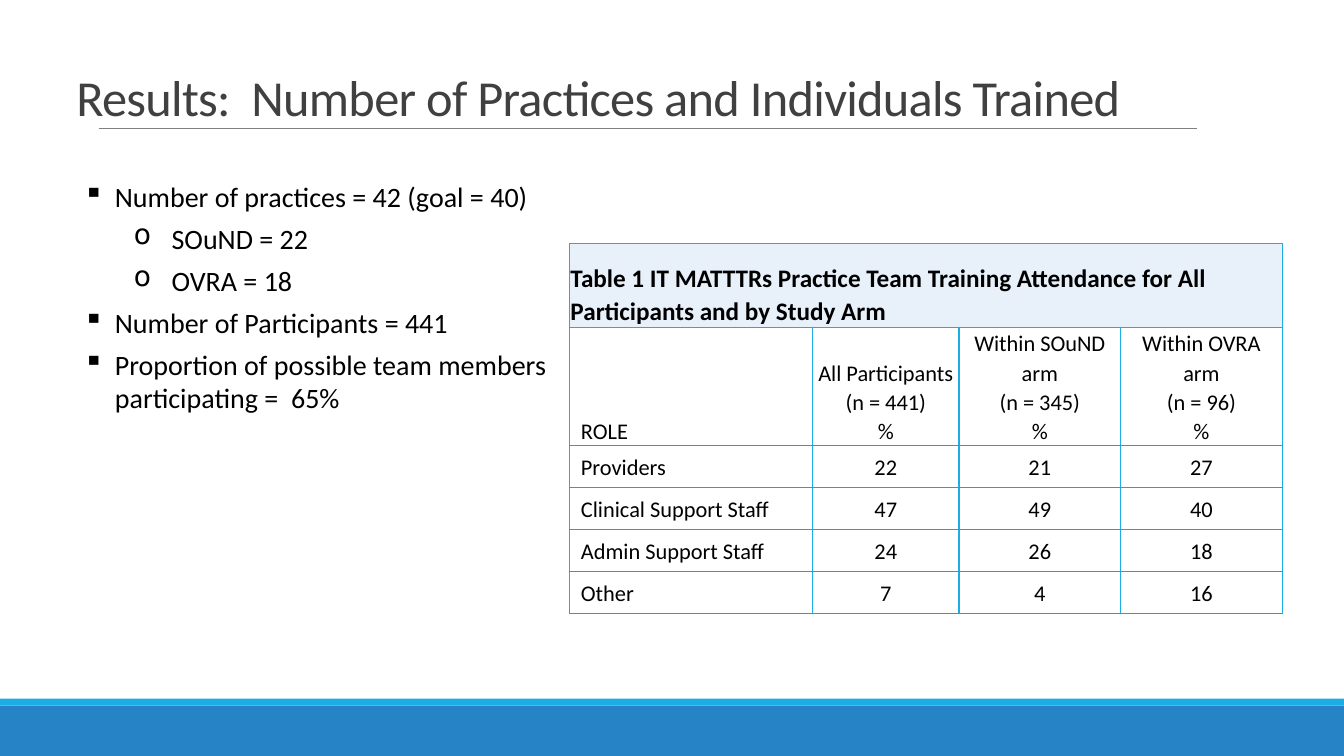
from dataclasses import dataclass
from lxml.etree import SubElement as Sub
from pptx import Presentation
from pptx.dml.color import RGBColor as Rgb
from pptx.enum.shapes import MSO_CONNECTOR as Conn, MSO_SHAPE as Form
from pptx.enum.text import MSO_ANCHOR as Anchor, PP_ALIGN as Align
from pptx.oxml.ns import qn
from pptx.util import Pt


@dataclass(frozen=True)
class Theme:
    """Colours, font and type sizes of the slide."""
    font: str = "Calibri"
    ink: str = "000000"
    head: str = "404040"
    rule: str = "808080"
    cyan: str = "1CADE4"
    blue: str = "2683C6"
    pale: str = "E8F1FA"
    title: int = 36
    body: int = 20
    table: int = 18
    cell: int = 16


def write(para, text, font, size, color, bold=False, align=Align.LEFT,
          line=1.0, before=0, track=0):
    """Fill a paragraph with formatted text."""
    para.text = text
    para.alignment = align
    para.line_spacing = line
    para.space_before = Pt(before)
    for run in para.runs:
        face = run.font
        face.name, face.size, face.bold = font, Pt(size), bold
        face.color.rgb = Rgb.from_string(color)
        if track:
            face._element.set("spc", str(round(track * 100)))


def bullet(para, mark, left, hang):
    """Give a paragraph a bullet with a hanging indent."""
    props = para._p.get_or_add_pPr()
    props.set("marL", str(Pt(left)))
    props.set("indent", str(-Pt(hang)))
    Sub(props, qn("a:buChar"), char=mark)


def border(cell, side, color, width):
    """Draw one edge of a table cell."""
    edge = Sub(cell._tc.get_or_add_tcPr(), qn("a:ln" + side), w=str(Pt(width)))
    Sub(Sub(edge, qn("a:solidFill")), qn("a:srgbClr"), val=color)


class Page:
    """Hold the theme and the current slide."""

    def __init__(self, deck, theme):
        """Add a blank slide."""
        self.theme = theme
        self.slide = deck.slides.add_slide(deck.slide_layouts[6])

    def band(self, x, y, w, h, color):
        """Draw a plain filled bar."""
        bar = self.slide.shapes.add_shape(Form.RECTANGLE, Pt(x), Pt(y), Pt(w), Pt(h))
        bar.shadow.inherit = False
        bar.fill.solid()
        bar.fill.fore_color.rgb = Rgb.from_string(color)
        bar.line.fill.background()

    def rule(self, x, y, end):
        """Draw a thin level line."""
        line = self.slide.shapes.add_connector(Conn.STRAIGHT, Pt(x), Pt(y), Pt(end), Pt(y))
        line.line.width = Pt(0.5)
        line.line.color.rgb = Rgb.from_string(self.theme.rule)
        Sub(line._element.spPr, qn("a:effectLst"))

    def frame(self, x, y, w, h, anchor):
        """Add an empty wrapping text box."""
        text = self.slide.shapes.add_textbox(Pt(x), Pt(y), Pt(w), Pt(h)).text_frame
        text.word_wrap = True
        text.vertical_anchor = anchor
        return text

    def title(self, text, x, y, w, h):
        """Add the slide title."""
        look = self.theme
        para = self.frame(x, y, w, h, Anchor.BOTTOM).paragraphs[0]
        write(para, text, look.font, look.title, look.head, line=0.85, track=-0.5)

    def points(self, items, x, y, w, h):
        """Add a list of (level, text) points."""
        look = self.theme
        marks = [("▪", 22.5, 22.5), ("o", 63, 27)]
        frame = self.frame(x, y, w, h, Anchor.TOP)
        for i, (level, text) in enumerate(items):
            para = frame.add_paragraph() if i else frame.paragraphs[0]
            para.level = level
            write(para, text, look.font, look.body, look.ink, before=6)
            bullet(para, *marks[level])

    def table(self, head, rows, x, y, cols, highs):
        """Add a table with a full-width heading row."""
        shape = self.slide.shapes.add_table(
            len(highs), len(cols), Pt(x), Pt(y), Pt(sum(cols)), Pt(sum(highs)))
        grid = shape.table
        grid.first_row = grid.horz_banding = False
        for col, wide in zip(grid.columns, cols):
            col.width = Pt(wide)
        for row, high in zip(grid.rows, highs):
            row.height = Pt(high)
        grid.cell(0, 0).merge(grid.cell(0, len(cols) - 1))
        blank = [""] * (len(cols) - 1)
        for r, row in enumerate([[head, *blank], *rows]):
            for c, text in enumerate(row):
                self.cell(grid.cell(r, c), r, c, text)

    def cell(self, cell, r, c, text):
        """Style and fill one table cell."""
        look = self.theme
        for side in "LR":
            border(cell, side, look.cyan, 1)
        border(cell, "T", look.rule if r > 1 else look.cyan, 1)
        border(cell, "B", look.rule if r else look.cyan, 1)
        if r:
            cell.fill.background()
        else:
            cell.fill.solid()
            cell.fill.fore_color.rgb = Rgb.from_string(look.pale)
        cell.margin_left = Pt(8 if r and not c else 0.5)
        cell.margin_right = cell.margin_top = Pt(0.5)
        cell.margin_bottom = 0
        cell.vertical_anchor = Anchor.MIDDLE if r > 1 else Anchor.BOTTOM
        frame = cell.text_frame
        for i, part in enumerate(text.split("\n")):
            para = frame.add_paragraph() if i else frame.paragraphs[0]
            write(para, part, look.font, look.cell if r else look.table, look.ink,
                  bold=not r, align=Align.CENTER if c else Align.LEFT, line=1.07)


def main():
    """Build and save the slide."""
    deck = Presentation()
    deck.slide_width, deck.slide_height = Pt(960), Pt(540)
    look = Theme()
    page = Page(deck, look)
    page.band(0, 504, 960, 36, look.blue)
    page.band(0, 499, 960, 5, look.cyan)
    page.rule(70.5, 91.5, 855)
    page.table(
        "Table 1 IT MATTTRs Practice Team Training Attendance for All "
        "Participants and by Study Arm",
        [["ROLE", "All Participants\n(n = 441)\n%",
          "Within SOuND arm\n(n = 345)\n%", "Within OVRA\narm\n(n = 96)\n%"],
         ["Providers", "22", "21", "27"],
         ["Clinical Support Staff", "47", "49", "40"],
         ["Admin Support Staff", "24", "26", "18"],
         ["Other", "7", "4", "16"]],
        407, 174, [173.5, 104.5, 115.5, 115.5], [60, 84.5] + [30] * 4)
    page.title("Results:  Number of Practices and Individuals Trained",
               47.5, 14, 792, 80)
    page.points(
        [(0, "Number of practices = 42 (goal = 40)"),
         (1, "SOuND = 22"),
         (1, "OVRA = 18"),
         (0, "Number of Participants = 441"),
         (0, "Proportion of possible team members \vparticipating =  65%")],
        52.5, 124.5, 448.5, 177)
    deck.save("out.pptx")


if __name__ == "__main__":
    main()
